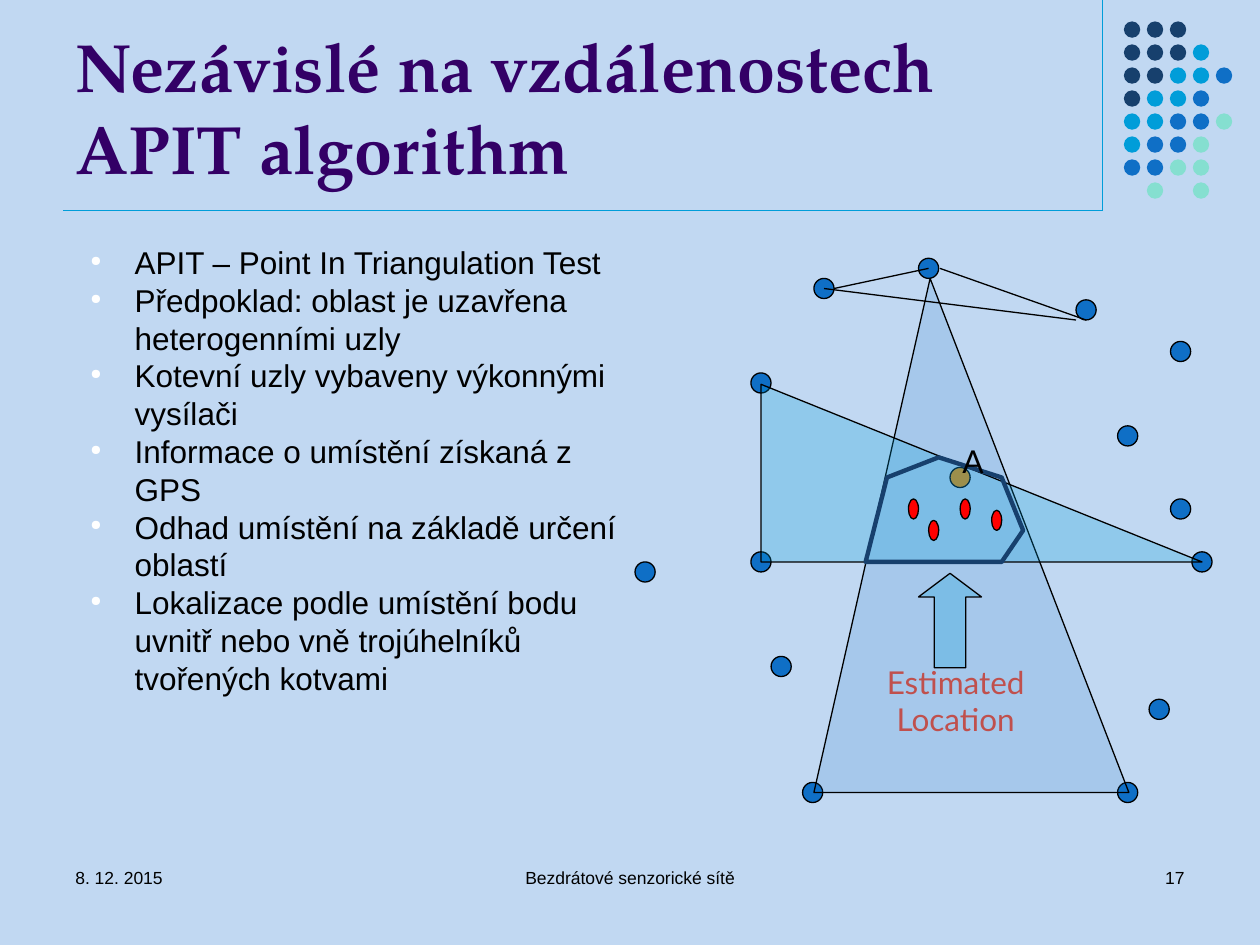
from lxml import etree
from pptx import Presentation
from pptx.dml.color import RGBColor
from pptx.enum.shapes import MSO_CONNECTOR, MSO_SHAPE
from pptx.enum.text import MSO_ANCHOR, MSO_AUTO_SIZE, PP_ALIGN
from pptx.oxml.ns import qn
from pptx.util import Inches, Pt

OVAL = MSO_SHAPE.OVAL
TRIANGLE = MSO_SHAPE.ISOSCELES_TRIANGLE
RIGHT_TRIANGLE = MSO_SHAPE.RIGHT_TRIANGLE
UP_ARROW = MSO_SHAPE.UP_ARROW
STRAIGHT = MSO_CONNECTOR.STRAIGHT
TOP, BOTTOM = MSO_ANCHOR.TOP, MSO_ANCHOR.BOTTOM
NO_FIT = MSO_AUTO_SIZE.NONE
LEFT, CENTER, RIGHT = PP_ALIGN.LEFT, PP_ALIGN.CENTER, PP_ALIGN.RIGHT

NAVY, BLUE, SKY, MINT = "17406D", "0F6FC6", "009DD9", "85DFD0"
BLACK, WHITE, RED, ORANGE = "000000", "FFFFFF", "FF0000", "F49100"
BACKGROUND, PURPLE, BRICK = "C1D8F2", "330066", "C0504D"

TITLE = {"size": Pt(39), "name": "TeX Gyre Pagella", "bold": True}
BODY = {"size": Pt(18), "name": "Arial"}
FOOTER = {"size": Pt(10), "name": "Arial"}
LABEL = {"size": Pt(18), "name": "Lato"}

DOT_COLORS = {"N": NAVY, "S": SKY, "B": BLUE, "M": MINT}
DOT_ROWS = ["NNN", "NNNS", "NNSSB", "NSSB", "SSBBM", "SBBM", "BBMM", ".M.M"]
DOT_STEP = 0.73 / 4
NODE = 0.16

BULLETS = [
    "APIT – Point In Triangulation Test",
    "Předpoklad: oblast je uzavřena heterogenními uzly",
    "Kotevní uzly vybaveny výkonnými vysílači",
    "Informace o umístění získaná z GPS",
    "Odhad umístění na základě určení oblastí",
    "Lokalizace podle umístění bodu uvnitř nebo vně trojúhelníků tvořených kotvami",
]
ANCHORS = [(7.29, 2.05), (5.96, 2.96), (5.96, 4.38), (6.37, 6.21),
           (8.87, 6.21), (9.46, 4.38), (8.54, 2.38), (6.12, 5.21)]
OUTER_ANCHORS = [(6.46, 2.21), (8.87, 3.38), (9.29, 2.71),
                 (9.29, 3.96), (5.04, 4.46), (9.12, 5.55)]
SENSORS = [(7.21, 3.96), (7.37, 4.13), (7.62, 3.96), (7.87, 4.05)]
OVERLAP = [(7.45, 3.63), (7.95, 3.79), (8.12, 4.21),
           (7.95, 4.46), (6.87, 4.46), (7.04, 3.79)]
SIGHT_LINES = [(6.54, 2.29, 8.54, 2.54), (6.62, 2.29, 7.37, 2.13),
               (7.46, 2.13, 8.62, 2.54)]


def rgb(color):
    return RGBColor.from_string(color)


class Deck:
    def __init__(self, slide, line_width=0.75):
        self.slide = slide
        self.line_width = line_width

    def background(self, color):
        fill = self.slide.background.fill
        fill.solid()
        fill.fore_color.rgb = rgb(color)

    def outline(self, sp, color, width=None):
        if color is None:
            sp.line.fill.background()
            return
        sp.line.color.rgb = rgb(color)
        sp.line.width = Pt(width or self.line_width)

    def shape(self, kind, box, fill, line=BLACK, alpha=None, adjustments=()):
        sp = self.slide.shapes.add_shape(kind, *map(Inches, box))
        sp.shadow.inherit = False
        for i, value in enumerate(adjustments):
            sp.adjustments[i] = value
        sp.fill.solid()
        sp.fill.fore_color.rgb = rgb(fill)
        if alpha is not None:
            clr = sp._element.spPr.find(qn("a:solidFill"))[0]
            etree.SubElement(clr, qn("a:alpha"), val=str(alpha * 1000))
        self.outline(sp, line)

    def polygon(self, points, line, width):
        start, *rest = [(Inches(x), Inches(y)) for x, y in points]
        builder = self.slide.shapes.build_freeform(*start)
        builder.add_line_segments(rest, close=True)
        sp = builder.convert_to_shape()
        sp.shadow.inherit = False
        sp.fill.background()
        self.outline(sp, line, width)

    def line(self, ends, color=BLACK):
        sp = self.slide.shapes.add_connector(STRAIGHT, *map(Inches, ends))
        etree.SubElement(sp._element.spPr, qn("a:effectLst"))
        self.outline(sp, color)

    def fill_text(self, tf, lines, style, color, align, anchor=TOP):
        frame = {"word_wrap": True, "auto_size": NO_FIT, "vertical_anchor": anchor,
                 "margin_left": Inches(0.1), "margin_right": Inches(0.1),
                 "margin_top": Inches(0.05), "margin_bottom": Inches(0.05)}
        for key, value in frame.items():
            setattr(tf, key, value)
        for i, line in enumerate(lines):
            p = tf.add_paragraph() if i else tf.paragraphs[0]
            p.alignment = align
            r = p.add_run()
            r.text = line
            for key, value in style.items():
                setattr(r.font, key, value)
            r.font.color.rgb = rgb(color)

    def title(self, box, lines):
        sp = self.slide.shapes.title
        sp.left, sp.top, sp.width, sp.height = map(Inches, box)
        self.fill_text(sp.text_frame, lines, TITLE, PURPLE, LEFT, BOTTOM)

    def text(self, box, lines, style, color=BLACK, align=LEFT):
        tf = self.slide.shapes.add_textbox(*map(Inches, box)).text_frame
        self.fill_text(tf, lines, style, color, align)
        return tf

    def bullets(self, box, lines):
        tf = self.text(box, lines, BODY)
        for p in tf.paragraphs:
            pPr = p._p.get_or_add_pPr()
            pPr.set("marL", str(Inches(0.47)))
            pPr.set("indent", str(Inches(-0.35)))
            clr = etree.SubElement(pPr, qn("a:buClr"))
            etree.SubElement(clr, qn("a:srgbClr"), val=WHITE)
            etree.SubElement(pPr, qn("a:buSzPct"), val="45000")
            etree.SubElement(pPr, qn("a:buChar"), char="●")


def main():
    prs = Presentation()
    prs.slide_width, prs.slide_height = Inches(10), Inches(7.5)
    deck = Deck(prs.slides.add_slide(prs.slide_layouts[5]))
    deck.background(BACKGROUND)

    deck.line((8.75, 0, 8.75, 1.67), SKY)
    for row, codes in enumerate(DOT_ROWS):
        for col, code in enumerate(codes):
            if code in DOT_COLORS:
                box = (8.92 + col * DOT_STEP, 0.17 + row * DOT_STEP, 0.13, 0.13)
                deck.shape(OVAL, box, DOT_COLORS[code], line=None)
    deck.line((0.5, 1.67, 8.75, 1.67), SKY)

    deck.title((0.5, 0.13, 8.25, 1.41), ["Nezávislé na vzdálenostech", "APIT algorithm"])
    deck.bullets((0.5, 1.88, 4.54, 4.82), BULLETS)
    deck.text((0.5, 6.83, 2.33, 0.5), ["8. 12. 2015"], FOOTER)
    deck.text((3.42, 6.83, 3.16, 0.5), ["Bezdrátové senzorické sítě"], FOOTER, align=CENTER)
    deck.text((7.17, 6.83, 2.33, 0.5), ["17"], FOOTER, align=RIGHT)

    for x, y in ANCHORS:
        deck.shape(OVAL, (x, y, NODE, NODE), BLUE)
    deck.shape(OVAL, (7.54, 3.71, NODE, NODE), ORANGE)
    deck.shape(TRIANGLE, (6.46, 2.21, 2.5, 4.08), BLUE, alpha=15, adjustments=[0.369])
    deck.shape(RIGHT_TRIANGLE, (6.04, 3.05, 3.5, 1.41), SKY, alpha=25)
    for x, y in OUTER_ANCHORS:
        deck.shape(OVAL, (x, y, NODE, NODE), BLUE)

    deck.polygon(OVERLAP, NAVY, 2.5)
    deck.shape(UP_ARROW, (7.29, 4.55, 0.5, 0.75), SKY, alpha=25, adjustments=[0.5, 0.375])
    deck.text((6.71, 5.21, 1.75, 0.7), ["Estimated Location"], LABEL, BRICK, CENTER)
    deck.text((7.54, 3.46, 0.33, 0.4), ["A"], LABEL, align=CENTER)
    for x, y in SENSORS:
        deck.shape(OVAL, (x, y, NODE / 2, NODE), RED)
    for ends in SIGHT_LINES:
        deck.line(ends)

    prs.save("out.pptx")


if __name__ == "__main__":
    main()
